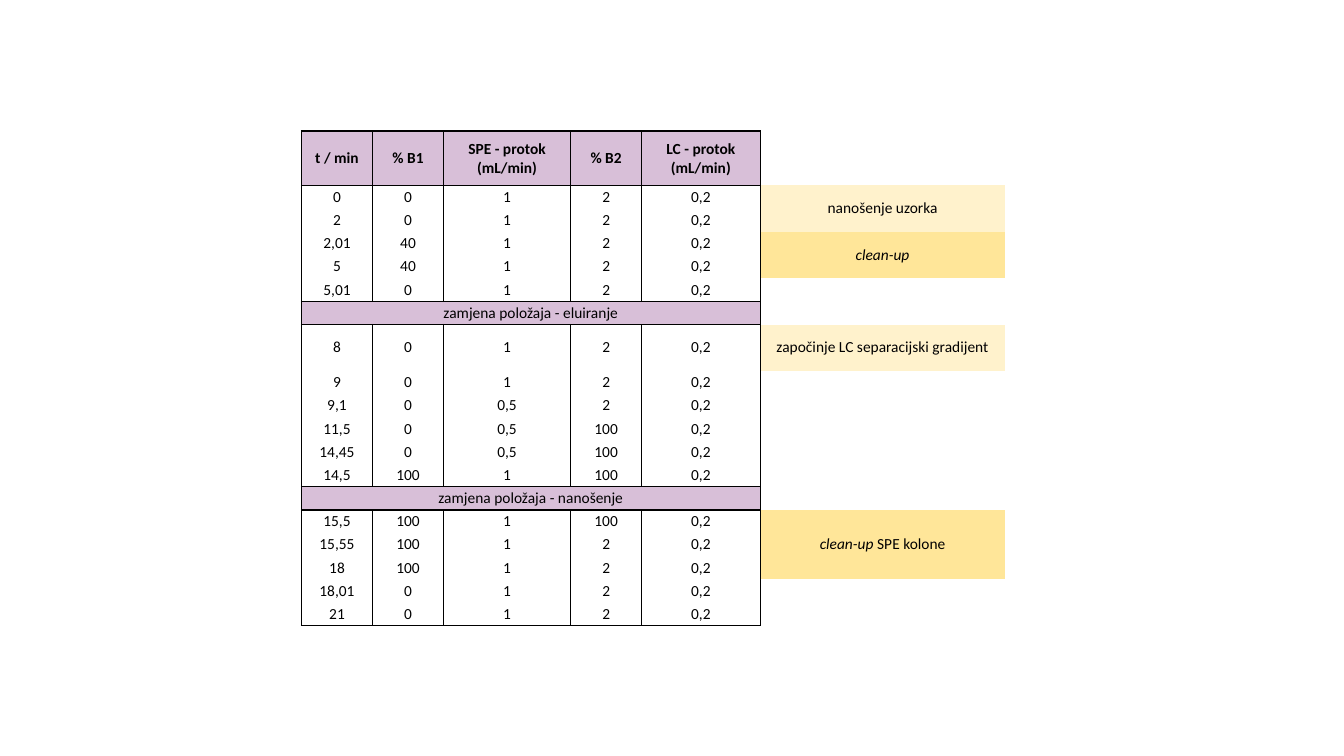
from lxml.etree import SubElement as Sub
from pptx import Presentation
from pptx.dml.color import RGBColor
from pptx.enum.text import MSO_ANCHOR, PP_ALIGN
from pptx.oxml.ns import qn
from pptx.util import Inches, Pt

MAUVE, CREAM, GOLD = "D8BFD8", "FFF2CC", "FFE699"

HEADS = ["t / min", "% B1", "SPE - protok (mL/min)", "% B2", "LC - protok (mL/min)"]
BLOCKS = [
    (HEADS, ["0 0 1 2 0,2", "2 0 1 2 0,2", "2,01 40 1 2 0,2",
             "5 40 1 2 0,2", "5,01 0 1 2 0,2"]),
    (["zamjena položaja - eluiranje"],
     ["8 0 1 2 0,2", "9 0 1 2 0,2", "9,1 0 0,5 2 0,2", "11,5 0 0,5 100 0,2",
      "14,45 0 0,5 100 0,2", "14,5 100 1 100 0,2"]),
    (["zamjena položaja - nanošenje"],
     ["15,5 100 1 100 0,2", "15,55 100 1 2 0,2", "18 100 1 2 0,2",
      "18,01 0 1 2 0,2", "21 0 1 2 0,2"]),
]
# first row, row count, fill, runs as (text, italic)
NOTES = [
    (1, 2, CREAM, [("nanošenje uzorka", False)]),
    (3, 2, GOLD, [("clean-up", True)]),
    (7, 1, CREAM, [("započinje LC separacijski gradijent", False)]),
    (14, 3, GOLD, [("clean-up", True), (" SPE kolone", False)]),
]
WIDTHS = [70.5, 70.5, 126, 70.5, 117.5, 243]
ROW, TALL, HEAD = 23, 46, 54


def color(code):
    return RGBColor.from_string(code)


class Deck:
    """Style and current slide, on a grid of 100 cells to the inch."""

    font, size, ink, line = "Calibri", Pt(11), "000000", Pt(1)

    def __init__(self, cols, rows):
        self.prs = Presentation()
        self.prs.slide_width = self.grid(cols)
        self.prs.slide_height = self.grid(rows)
        self.slide = self.prs.slides.add_slide(self.prs.slide_layouts[6])

    def grid(self, cells):
        return Inches(cells / 100)

    def table(self, left, top, widths, heights):
        box = [self.grid(n) for n in (left, top, sum(widths), sum(heights))]
        tab = self.slide.shapes.add_table(len(heights), len(widths), *box).table
        tab.first_row = tab.horz_banding = False
        for col, width in zip(tab.columns, widths):
            col.width = self.grid(width)
        for row, height in zip(tab.rows, heights):
            row.height = self.grid(height)
        return tab

    def frame(self, cell, sides):
        """Set margins, clear the fill and rule the sides named by L, R, T, B."""
        cell.margin_left = cell.margin_right = self.grid(7)
        cell.margin_top = cell.margin_bottom = 0
        cell.vertical_anchor = MSO_ANCHOR.MIDDLE
        props = cell._tc.get_or_add_tcPr()
        for side in "LRTB":
            edge = Sub(props, qn("a:ln" + side), w=str(self.line))
            if side in sides:
                Sub(Sub(edge, qn("a:solidFill")), qn("a:srgbClr"), val=self.ink)
            else:
                Sub(edge, qn("a:noFill"))
        cell.fill.background()
        end = cell.text_frame.paragraphs[0]._p.get_or_add_endParaRPr()
        end.set("sz", str(int(self.size.pt * 100)))

    def label(self, cell, runs, fill=None, bold=False):
        if fill:
            cell.fill.solid()
            cell.fill.fore_color.rgb = color(fill)
        para = cell.text_frame.paragraphs[0]
        para.alignment = PP_ALIGN.CENTER
        for text, slant in runs:
            run = para.add_run()
            run.text = text
            font = run.font
            font.name, font.size = self.font, self.size
            font.bold, font.italic = bold, slant
            font.color.rgb = color(self.ink)


def main():
    rows, bars = [], []
    for title, lines in BLOCKS:
        bars.append(len(rows))
        rows += [title] + [line.split() for line in lines]
    count, side = len(rows), len(HEADS)
    heights = [{0: HEAD, 7: TALL}.get(r, ROW) for r in range(count)]

    deck = Deck(1333, 750)
    tab = deck.table(299, 130, WIDTHS, heights)
    rules = set(bars) | {r + 1 for r in bars} | {count}
    for r in range(count):
        edges = "LR" + "T" * (r in rules) + "B" * (r + 1 in rules)
        for c in range(side + 1):
            deck.frame(tab.cell(r, c), edges if c < side else "L")

    for r, texts in enumerate(rows):
        if len(texts) == 1:
            tab.cell(r, 0).merge(tab.cell(r, side - 1))
        for c, text in enumerate(texts):
            fill = MAUVE if r in bars else None
            deck.label(tab.cell(r, c), [(text, False)], fill, bold=r == 0)

    for first, span, fill, runs in NOTES:
        cell = tab.cell(first, side)
        if span > 1:
            cell.merge(tab.cell(first + span - 1, side))
        deck.label(cell, runs, fill)
    deck.prs.save("out.pptx")


if __name__ == "__main__":
    main()
